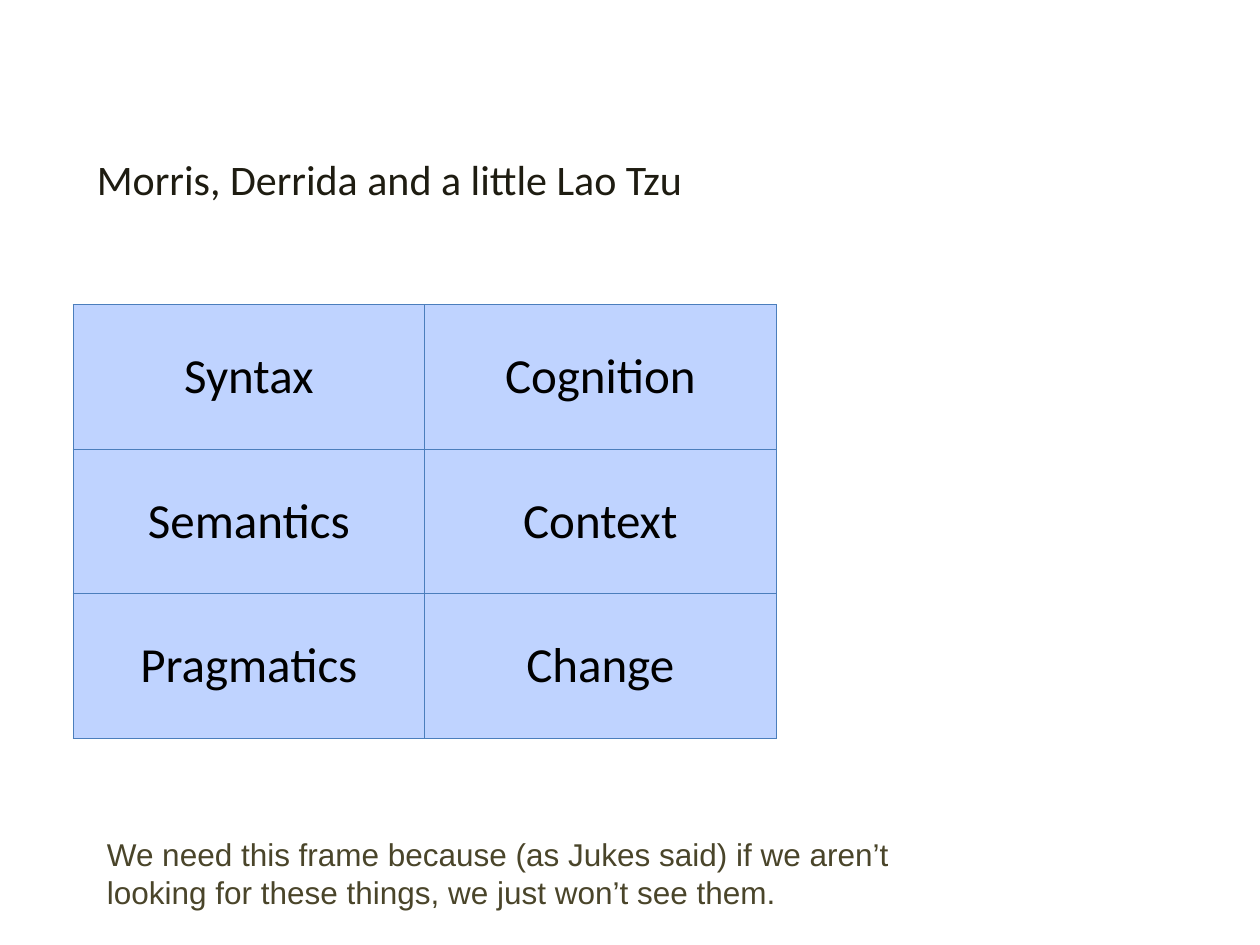
from lxml.etree import SubElement
from pptx import Presentation
from pptx.dml.color import RGBColor
from pptx.enum.text import MSO_ANCHOR, MSO_AUTO_SIZE, PP_ALIGN
from pptx.oxml.ns import qn
from pptx.util import Pt

EMU_PER_PX = 9144
INK = RGBColor(0x1E, 0x1C, 0x11)
OLIVE = RGBColor(0x4A, 0x45, 0x2A)
BLACK = RGBColor(0x00, 0x00, 0x00)
PALE_BLUE = RGBColor(0xBF, 0xD3, 0xFF)
BORDER_BLUE = RGBColor(0x4B, 0x7E, 0xBC)

FRAME_ROWS = [
    ("Syntax", "Cognition"),
    ("Semantics", "Context"),
    ("Pragmatics", "Change"),
]


def px(length):
    return length * EMU_PER_PX


class FramePage:
    formats = {
        "title": {"name": "Calibri", "size": Pt(24)},
        "cell": {"name": "Calibri", "size": Pt(28)},
        "note": {"name": "Arial", "size": Pt(18)},
    }
    colors = {"title": INK, "cell": BLACK, "note": OLIVE}

    def __init__(self, deck):
        self.page = deck.slides.add_slide(deck.slide_layouts[6])

    def add_span(self, paragraph, text, style):
        span = paragraph.add_run()
        span.text = text
        for attribute, value in self.formats[style].items():
            setattr(span.font, attribute, value)
        span.font.color.rgb = self.colors[style]

    def text(self, place, text, style, wrap=True):
        box = self.page.shapes.add_textbox(*map(px, place))
        box.text_frame.word_wrap = wrap
        box.text_frame.auto_size = MSO_AUTO_SIZE.SHAPE_TO_FIT_TEXT
        self.add_span(box.text_frame.paragraphs[0], text, style)

    def border(self, cell):
        properties = cell._tc.get_or_add_tcPr()
        for index, side in enumerate(("lnL", "lnR", "lnT", "lnB")):
            line = properties.makeelement(qn(f"a:{side}"), {"w": str(Pt(0.75))})
            fill = SubElement(line, qn("a:solidFill"))
            SubElement(fill, qn("a:srgbClr"), val=str(BORDER_BLUE))
            properties.insert(index, line)

    def table(self, place, rows):
        shape = self.page.shapes.add_table(len(rows), len(rows[0]), *map(px, place))
        table = shape.table
        table.first_row = table.horz_banding = False
        for cell, text in zip(table.iter_cells(), sum(rows, ())):
            cell.vertical_anchor = MSO_ANCHOR.MIDDLE
            cell.fill.solid()
            cell.fill.fore_color.rgb = PALE_BLUE
            paragraph = cell.text_frame.paragraphs[0]
            paragraph.alignment = PP_ALIGN.CENTER
            self.add_span(paragraph, text, "cell")
            self.border(cell)


def main():
    deck = Presentation()
    deck.slide_width, deck.slide_height = px(1000), px(750)
    page = FramePage(deck)
    page.text((67, 117, 490, 50), "Morris, Derrida and a little Lao Tzu", "title", wrap=False)
    page.table((58, 242, 558, 344), FRAME_ROWS)
    page.text(
        (75, 658, 725, 70),
        "We need this frame because (as Jukes said) if we aren’t "
        "looking for these things, we just won’t see them.",
        "note",
    )
    deck.save("out.pptx")


if __name__ == "__main__":
    main()
